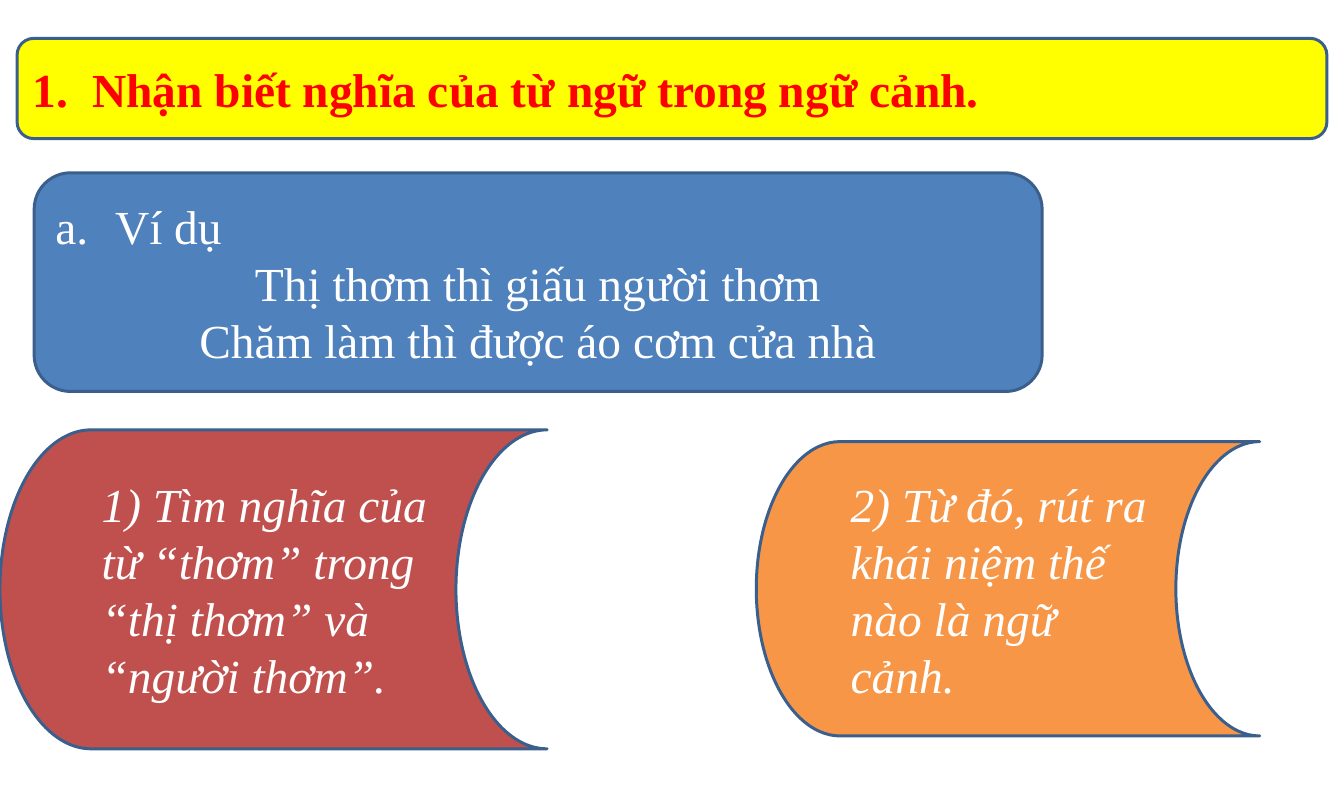
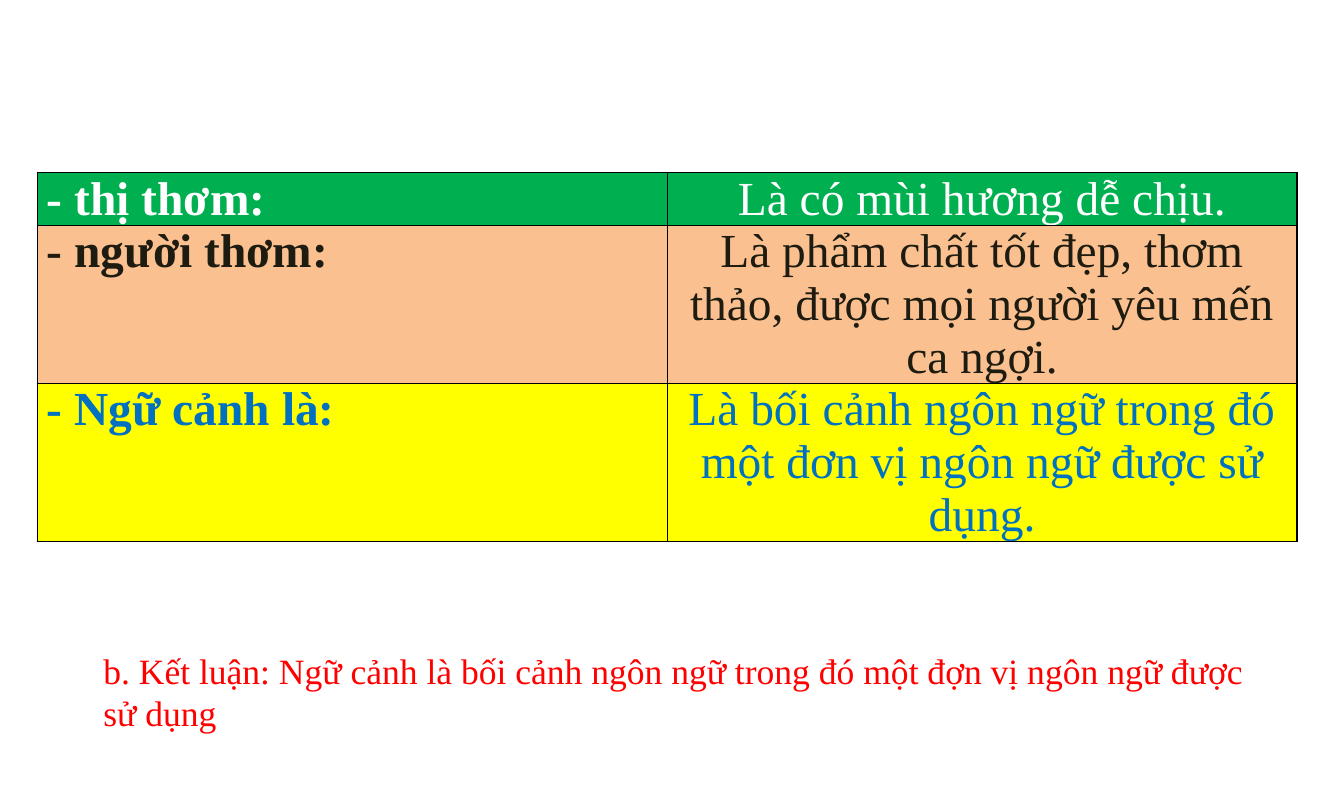
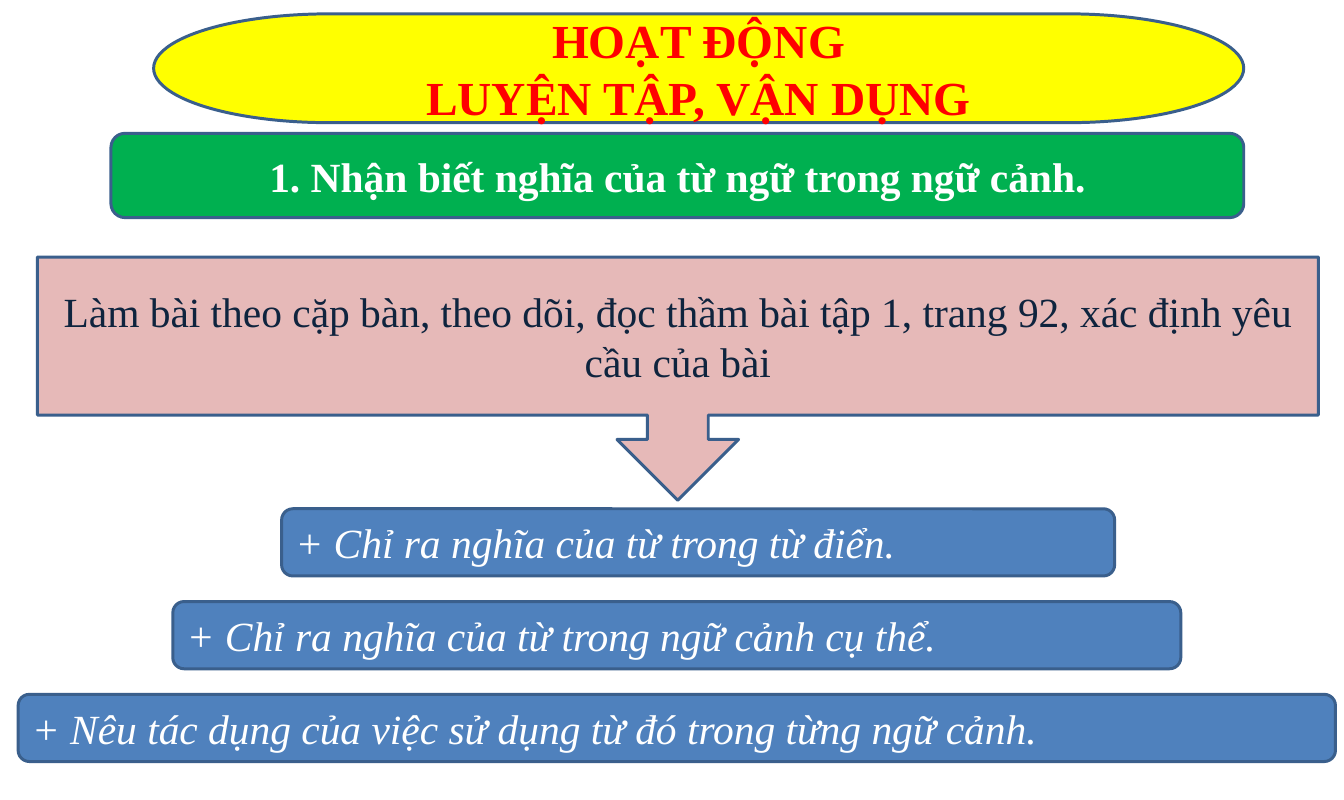
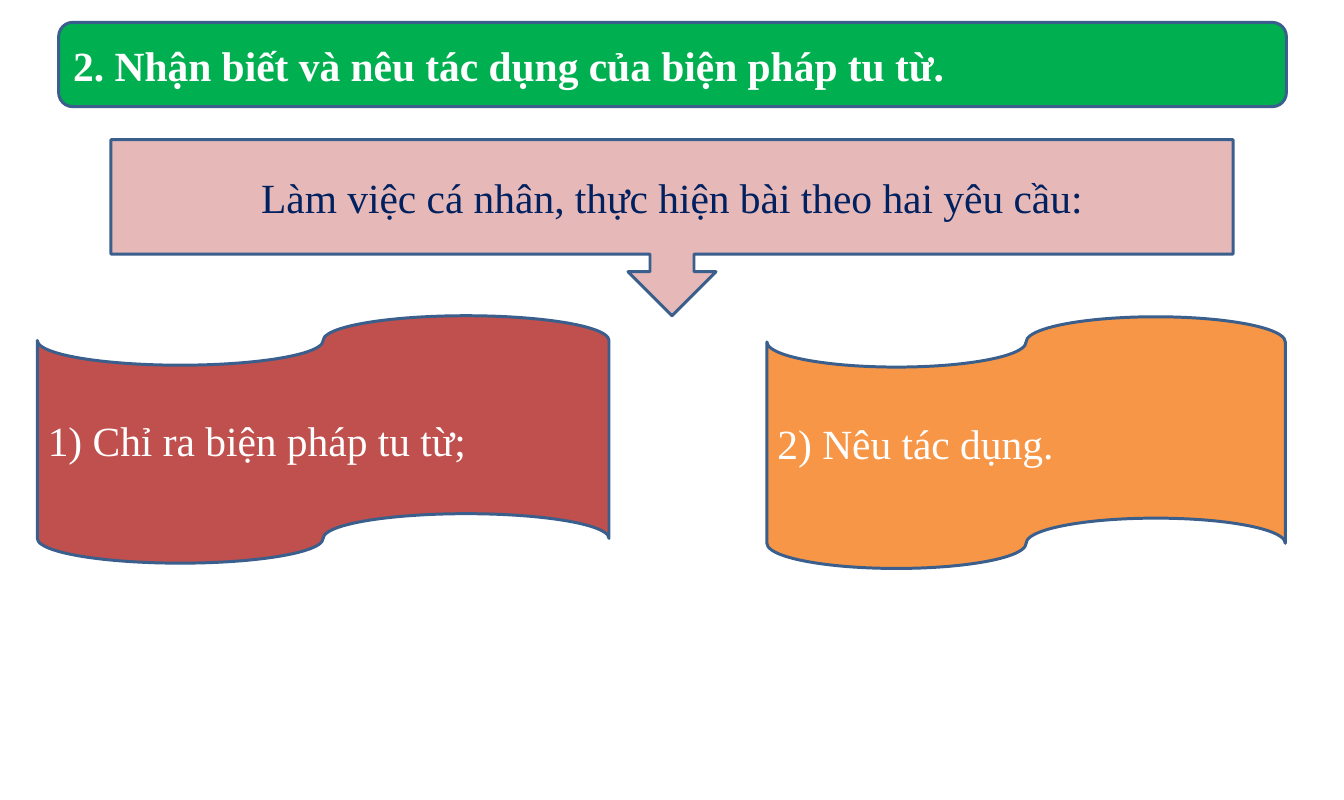
from dataclasses import dataclass

from lxml import etree
from pptx import Presentation
from pptx.dml.color import RGBColor
from pptx.enum.shapes import MSO_SHAPE
from pptx.enum.text import MSO_ANCHOR, PP_ALIGN
from pptx.oxml.ns import qn
from pptx.slide import Slide
from pptx.table import _Cell
from pptx.text.text import _Paragraph
from pptx.util import Inches, Pt

ROUNDED = MSO_SHAPE.ROUNDED_RECTANGLE
STORAGE = MSO_SHAPE.FLOWCHART_STORED_DATA
TERMINATOR = MSO_SHAPE.FLOWCHART_TERMINATOR
CALLOUT = MSO_SHAPE.DOWN_ARROW_CALLOUT
TAPE = MSO_SHAPE.FLOWCHART_PUNCHED_TAPE
LEFT, CENTER = PP_ALIGN.LEFT, PP_ALIGN.CENTER
MIDDLE = MSO_ANCHOR.MIDDLE

WHITE = RGBColor(0xFF, 0xFF, 0xFF)
YELLOW = RGBColor(0xFF, 0xFF, 0x00)
RED = RGBColor(0xFF, 0x00, 0x00)
GREEN = RGBColor(0x00, 0xB0, 0x50)
BLUE = RGBColor(0x4F, 0x81, 0xBD)
BRICK = RGBColor(0xC0, 0x50, 0x4D)
ORANGE = RGBColor(0xF7, 0x96, 0x46)
PINK = RGBColor(0xE6, 0xB9, 0xB8)
PEACH = RGBColor(0xFA, 0xC0, 0x90)
OUTLINE = RGBColor(0x3A, 0x5F, 0x8C)
INK = RGBColor(0x1E, 0x1C, 0x11)
SKY = RGBColor(0x00, 0x70, 0xC0)
MIDNIGHT = RGBColor(0x0F, 0x24, 0x3E)
NAVY = RGBColor(0x00, 0x20, 0x60)

FONT = "Times New Roman"
LARGE, MEDIUM, SMALL = 32, 28, 24
NUMBER_INDENT = Inches(0.56)
BORDER_SIDES = ("a:lnL", "a:lnR", "a:lnT", "a:lnB")


@dataclass(frozen=True)
class Line:
    text: str
    align: PP_ALIGN = LEFT
    numbering: str = ""


@dataclass(frozen=True)
class Style:
    geometry: MSO_SHAPE
    fill: RGBColor
    color: RGBColor = WHITE
    size: int = MEDIUM
    bold: bool = False
    italic: bool = False


@dataclass(frozen=True)
class Panel:
    style: Style
    left: float
    top: float
    width: float
    height: float
    lines: tuple[Line, ...]


@dataclass(frozen=True)
class Meaning:
    term: str
    definition: str
    fill: RGBColor
    color: RGBColor
    line_count: int


TITLE = Style(ROUNDED, YELLOW, RED, LARGE, bold=True)
ACTIVITY = Style(TERMINATOR, YELLOW, RED, LARGE, bold=True)
SECTION = Style(ROUNDED, GREEN, bold=True)
EXAMPLE = Style(ROUNDED, BLUE, size=LARGE)
STEP = Style(ROUNDED, BLUE, italic=True)
TASK = Style(CALLOUT, PINK, MIDNIGHT)
SOLO_TASK = Style(CALLOUT, PINK, NAVY)
FIRST_QUESTION = Style(STORAGE, BRICK, size=LARGE, italic=True)
SECOND_QUESTION = Style(STORAGE, ORANGE, size=LARGE, italic=True)
FIRST_DEMAND = Style(TAPE, BRICK)
SECOND_DEMAND = Style(TAPE, ORANGE)

CONTEXT_PANELS = (
    Panel(TITLE, 0.16, 0.36, 12.28, 0.94, (
        Line("Nhận biết nghĩa của từ ngữ trong ngữ cảnh.", numbering="arabicPeriod"),
    )),
    Panel(EXAMPLE, 0.32, 1.62, 9.45, 2.05, (
        Line("Ví dụ", numbering="alphaLcPeriod"),
        Line("Thị thơm thì giấu người thơm", CENTER),
        Line("Chăm làm thì được áo cơm cửa nhà", CENTER),
    )),
    Panel(FIRST_QUESTION, 0, 4.03, 5.13, 2.99, (
        Line("1) Tìm nghĩa của từ “thơm” trong “thị thơm” và “người thơm”."),
    )),
    Panel(SECOND_QUESTION, 7.09, 4.14, 4.72, 2.76, (
        Line("2) Từ đó, rút ra khái niệm thế nào là ngữ cảnh."),
    )),
)

MEANINGS = (
    Meaning("- thị thơm:", "Là có mùi hương dễ chịu.", GREEN, WHITE, 1),
    Meaning("- người thơm:",
            "Là phẩm chất tốt đẹp, thơm thảo, được mọi người yêu mến ca ngợi.",
            PEACH, INK, 3),
    Meaning("- Ngữ cảnh là:",
            "Là bối cảnh ngôn ngữ trong đó một đơn vị ngôn ngữ được sử dụng.",
            YELLOW, SKY, 3),
)
MEANING_LINE_HEIGHT = 0.49
CONCLUSION = ("b. Kết luận: Ngữ cảnh là bối cảnh ngôn ngữ trong đó "
              "một đợn vị ngôn ngữ được sử dụng")

STEPS = (
    (2.64, 7.81, "+ Chỉ ra nghĩa của từ trong từ điển."),
    (1.62, 9.45, "+ Chỉ ra nghĩa của từ trong ngữ cảnh cụ thể."),
    (0.17, 12.35, "+ Nêu tác dụng của việc sử dụng từ đó trong từng ngữ cảnh."),
)
STEP_TOP, STEP_PITCH, STEP_HEIGHT = 4.77, 0.87, 0.63

PRACTICE_PANELS = (
    Panel(ACTIVITY, 1.44, 0.13, 10.22, 1.02, (
        Line("HOẠT ĐỘNG", CENTER),
        Line("LUYỆN TẬP, VẬN DỤNG", CENTER),
    )),
    Panel(SECTION, 1.04, 1.25, 10.62, 0.79, (
        Line("1. Nhận biết nghĩa của từ ngữ trong ngữ cảnh.", CENTER),
    )),
    Panel(TASK, 0.35, 2.41, 12.01, 2.28, (
        Line("Làm bài theo cặp bàn, theo dõi, đọc thầm bài tập 1, trang 92, "
             "xác định yêu cầu của bài", CENTER),
    )),
    *(
        Panel(STEP, left, STEP_TOP + row * STEP_PITCH, width, STEP_HEIGHT, (Line(text),))
        for row, (left, width, text) in enumerate(STEPS)
    ),
)

RHETORIC_PANELS = (
    Panel(SECTION, 0.55, 0.21, 11.51, 0.79, (
        Line("2. Nhận biết và nêu tác dụng của biện pháp tu từ."),
    )),
    Panel(SOLO_TASK, 1.04, 1.31, 10.52, 1.65, (
        Line("Làm việc cá nhân, thực hiện bài theo hai yêu cầu:", CENTER),
    )),
    Panel(FIRST_DEMAND, 0.35, 2.96, 5.36, 2.32, (Line("1) Chỉ ra biện pháp tu từ;"),)),
    Panel(SECOND_DEMAND, 7.19, 2.97, 4.86, 2.36, (Line("2) Nêu tác dụng."),)),
)


def set_font(paragraph: _Paragraph, size: int, color: RGBColor,
             bold: bool = False, italic: bool = False) -> None:
    font = paragraph.font
    font.name = FONT
    font.size = Pt(size)
    font.color.rgb = color
    font.bold = bold
    font.italic = italic


def add_numbering(paragraph: _Paragraph, scheme: str) -> None:
    properties = paragraph._p.get_or_add_pPr()
    properties.set("marL", str(NUMBER_INDENT))
    properties.set("indent", str(-NUMBER_INDENT))
    number = etree.Element(qn("a:buAutoNum"), type=scheme)
    properties.insert(0, number)


def add_panel(slide: Slide, panel: Panel) -> None:
    style = panel.style
    shape = slide.shapes.add_shape(
        style.geometry, Inches(panel.left), Inches(panel.top),
        Inches(panel.width), Inches(panel.height))
    shape.shadow.inherit = False
    shape.fill.solid()
    shape.fill.fore_color.rgb = style.fill
    shape.line.color.rgb = OUTLINE
    shape.line.width = Pt(2)
    frame = shape.text_frame
    frame.word_wrap = True
    frame.vertical_anchor = MIDDLE
    frame.text = "\n".join(line.text for line in panel.lines)
    for paragraph, line in zip(frame.paragraphs, panel.lines):
        paragraph.alignment = line.align
        set_font(paragraph, style.size, style.color, style.bold, style.italic)
        if line.numbering:
            add_numbering(paragraph, line.numbering)


def add_borders(cell: _Cell) -> None:
    properties = cell._tc.get_or_add_tcPr()
    for position, side in enumerate(BORDER_SIDES):
        border = etree.Element(qn(side), w=str(Pt(1)))
        fill = etree.SubElement(border, qn("a:solidFill"))
        etree.SubElement(fill, qn("a:srgbClr"), val="000000")
        properties.insert(position, border)


def fill_cell(cell: _Cell, text: str, meaning: Meaning,
              align: PP_ALIGN, bold: bool) -> None:
    cell.margin_left = cell.margin_right = Inches(0.09)
    cell.margin_top = cell.margin_bottom = 0
    cell.fill.solid()
    cell.fill.fore_color.rgb = meaning.fill
    add_borders(cell)
    cell.text = text
    paragraph = cell.text_frame.paragraphs[0]
    paragraph.alignment = align
    set_font(paragraph, LARGE, meaning.color, bold)


def add_meanings(slide: Slide) -> None:
    total_lines = sum(meaning.line_count for meaning in MEANINGS)
    table = slide.shapes.add_table(
        len(MEANINGS), 2, Inches(0.35), Inches(1.62),
        Inches(11.81), Inches(total_lines * MEANING_LINE_HEIGHT)).table
    table.first_row = False
    table.horz_banding = False
    for row, meaning in enumerate(MEANINGS):
        table.rows[row].height = Inches(meaning.line_count * MEANING_LINE_HEIGHT)
        fill_cell(table.cell(row, 0), meaning.term, meaning, LEFT, True)
        fill_cell(table.cell(row, 1), meaning.definition, meaning, CENTER, False)


def add_conclusion(slide: Slide) -> None:
    frame = slide.shapes.add_textbox(
        Inches(0.87), Inches(6.03), Inches(11.02), Inches(0.91)).text_frame
    frame.word_wrap = True
    frame.text = CONCLUSION
    set_font(frame.paragraphs[0], SMALL, RED)


def main() -> None:
    deck = Presentation()
    deck.slide_width = Inches(12.6)
    deck.slide_height = Inches(7.5)
    blank = deck.slide_layouts[6]
    for panels in (CONTEXT_PANELS, (), PRACTICE_PANELS, RHETORIC_PANELS):
        slide = deck.slides.add_slide(blank)
        for panel in panels:
            add_panel(slide, panel)
        if not panels:
            add_meanings(slide)
            add_conclusion(slide)
    deck.save("out.pptx")


if __name__ == "__main__":
    main()
